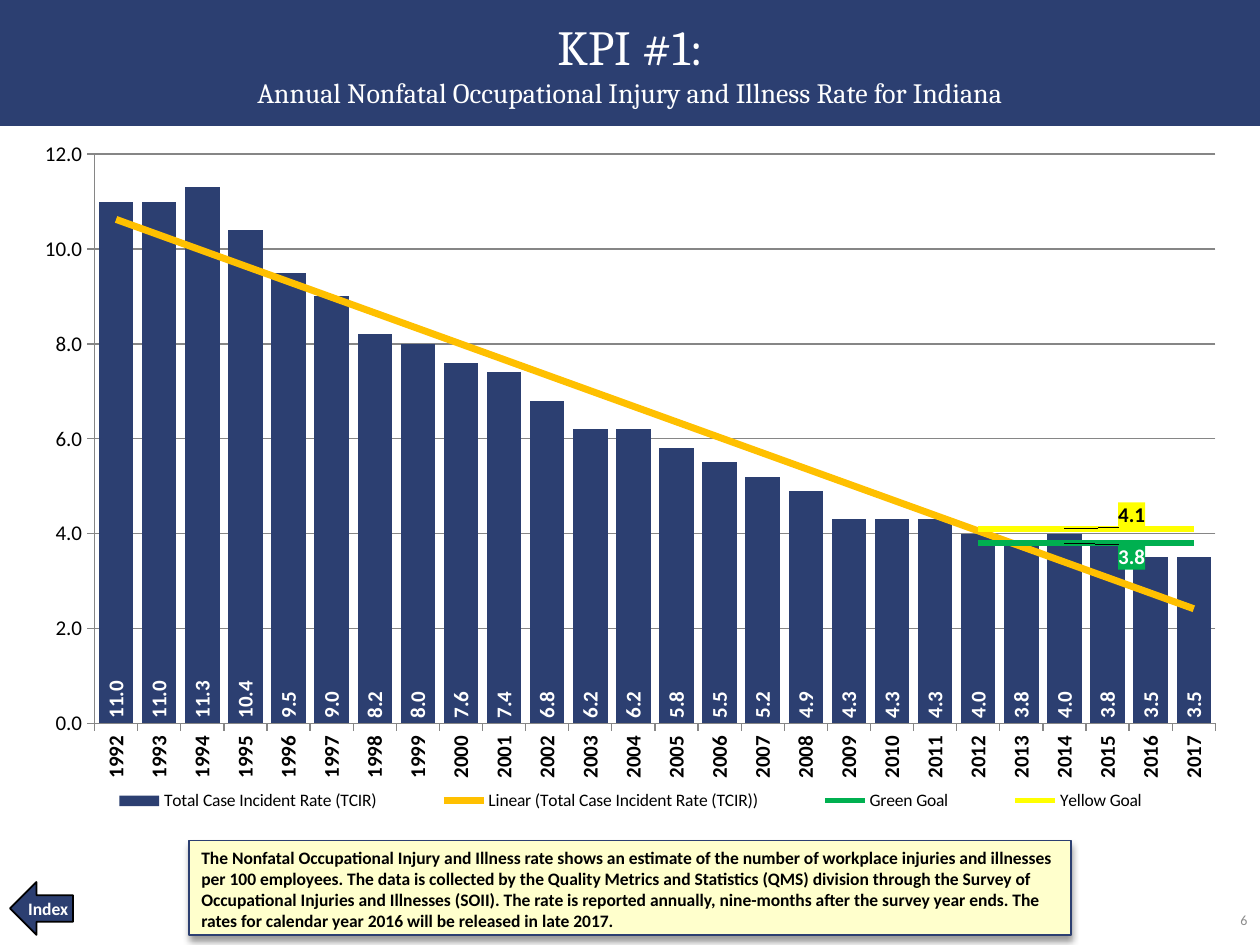
from lxml import etree
from pptx import Presentation
from pptx.chart.data import CategoryChartData as Data
from pptx.dml.color import RGBColor as RGB
from pptx.enum.chart import XL_CHART_TYPE as Kind
from pptx.enum.chart import XL_LABEL_POSITION as Spot
from pptx.enum.chart import XL_LEGEND_POSITION as Side
from pptx.enum.chart import XL_MARKER_STYLE as Mark
from pptx.enum.chart import XL_TICK_MARK as Tick
from pptx.enum.shapes import MSO_SHAPE as Shape
from pptx.enum.text import MSO_ANCHOR as Anchor
from pptx.enum.text import PP_ALIGN as Align
from pptx.oxml import parse_xml
from pptx.oxml.ns import qn
from pptx.util import Inches, Pt

HUES = {"navy": "2C3F71", "gold": "FFC000", "green": "00B050",
        "yellow": "FFFF00", "cream": "FFFFCC", "gray": "8C8C8C",
        "grid": "868686", "black": "000000", "white": "FFFFFF"}
TITLE = [("KPI #1:", 28),
         ("Annual Nonfatal Occupational Injury and Illness Rate for Indiana", 16)]
NOTE = [
    "The Nonfatal Occupational Injury and Illness rate shows an estimate of the number of workplace injuries and illnesses",
    "per 100 employees. The data is collected by the Quality Metrics and Statistics (QMS) division through the Survey of",
    "Occupational Injuries and Illnesses (SOII). The rate is reported annually, nine-months after the survey year ends. The",
    "rates for calendar year 2016 will be released in late 2017.",
]
YEARS = [str(year) for year in range(1992, 2018)]
RATES = [11, 11, 11.3, 10.4, 9.5, 9, 8.2, 8, 7.6, 7.4, 6.8, 6.2, 6.2,
         5.8, 5.5, 5.2, 4.9, 4.3, 4.3, 4.3, 4, 3.8, 4, 3.8, 3.5, 3.5]
# name, value, line colour, label text colour, label shift down
GOALS = [("Green Goal", 3.8, "green", "white", 0.02),
         ("Yellow Goal", 4.1, "yellow", "black", -0.02)]
START, TAG = YEARS.index("2012"), YEARS.index("2014")
SPACES = " ".join(f'xmlns:{key}="http://schemas.openxmlformats.org/drawingml/2006/{end}"'
                  for key, end in (("a", "main"), ("c", "chart")))


def rgb(hue):
    return RGB.from_string(HUES[hue])


def xml(tag, body):
    return parse_xml(f"<{tag} {SPACES}>{body}</{tag}>")


def style(font, size, hue="black", bold=False, face="Calibri"):
    font.size, font.bold, font.name = Pt(size), bold, face
    font.color.rgb = rgb(hue)


def write(frame, lines, size=10, align=Align.LEFT, anchor=Anchor.MIDDLE,
          inset=(0.1, 0.05), hang=0, **look):
    """Fill a frame; a line is a string or a list of (text, size) split by breaks."""
    frame.word_wrap, frame.vertical_anchor = True, anchor
    frame.margin_left = frame.margin_right = Inches(inset[0])
    frame.margin_top = frame.margin_bottom = Inches(inset[1])
    for i, line in enumerate(lines):
        para = frame.paragraphs[0] if i == 0 else frame.add_paragraph()
        para.alignment = align
        if hang:
            prop = para._p.get_or_add_pPr()
            prop.set("marL", str(Inches(hang)))
            prop.set("indent", str(-Inches(hang)))
        for j, (text, pts) in enumerate([(line, size)] if isinstance(line, str) else line):
            if j:
                para.add_line_break()
            run = para.add_run()
            run.text = text
            style(run.font, pts, **look)


def block(slide, kind, box, fill, line=None, width=1):
    shape = slide.shapes.add_shape(kind, *map(Inches, box))
    shape.shadow.inherit = False
    shape.fill.solid()
    shape.fill.fore_color.rgb = rgb(fill)
    if line:
        shape.line.color.rgb, shape.line.width = rgb(line), Pt(width)
    else:
        shape.line.fill.background()
    return shape


def layout(x, y, w=None, h=None, inner=False):
    parts = '<c:layoutTarget val="inner"/>' if inner else ""
    if w:
        parts += '<c:xMode val="edge"/><c:yMode val="edge"/>'
    sizes = zip("xywh", (x, y, w, h))
    parts += "".join(f'<c:{k} val="{v}"/>' for k, v in sizes if v is not None)
    return xml("c:layout", f"<c:manualLayout>{parts}</c:manualLayout>")


def place(node, spot):
    """Swap the layout of a chart part, or put it after the first child."""
    for old in node.findall(qn("c:layout")):
        node.remove(old)
    node.insert(0 if node.tag == qn("c:plotArea") else 1, spot)


def turn(holder):
    holder.find(qn("c:txPr")).find(qn("a:bodyPr")).set("rot", "-5400000")


def split(chart):
    """Move the goal series from the bars to a line plot on the same axes."""
    bars = chart.plots[0]._element
    lines = xml("c:lineChart", '<c:grouping val="standard"/><c:varyColors val="0"/>')
    for ser in bars.findall(qn("c:ser"))[1:]:
        for flag in ser.findall(qn("c:invertIfNegative")):
            ser.remove(flag)
        lines.append(ser)
    etree.SubElement(lines, qn("c:marker")).set("val", "1")
    for axis in bars.findall(qn("c:axId")):
        etree.SubElement(lines, qn("c:axId")).set("val", axis.get("val"))
    bars.addnext(lines)


def draw_bars(plot):
    plot.gap_width, plot.vary_by_categories = 25, False
    bars = plot.series[0]
    bars.format.fill.solid()
    bars.format.fill.fore_color.rgb = rgb("navy")
    tags = bars.data_labels
    tags.show_value, tags.position = True, Spot.INSIDE_BASE
    tags.number_format, tags.number_format_is_linked = "0.0", False
    style(tags.font, 12, "white", True)
    turn(tags._element)
    trend = xml("c:trendline", f'<c:spPr><a:ln w="{Pt(4)}"><a:solidFill>'
                f'<a:srgbClr val="{HUES["gold"]}"/></a:solidFill></a:ln></c:spPr>'
                '<c:trendlineType val="linear"/>'
                '<c:dispRSqr val="0"/><c:dispEq val="0"/>')
    bars._element.find(qn("c:cat")).addprevious(trend)


def draw_goal(goal, hue, ink, shift):
    goal.smooth, goal.marker.style = False, Mark.NONE
    goal.format.line.color.rgb, goal.format.line.width = rgb(hue), Pt(3)
    goal.data_labels.show_value = False
    tag = goal.points[TAG].data_label
    style(tag.font, 12, ink, True)
    tag.position = Spot.RIGHT
    node = goal._element.find(qn("c:dLbls")).find(qn("c:dLbl"))
    place(node, layout(0.04, shift))
    node.find(qn("c:txPr")).addprevious(xml(
        "c:spPr", f'<a:solidFill><a:srgbClr val="{HUES[hue]}"/></a:solidFill>'))


def draw_chart(slide):
    data = Data(number_format="0.0")
    data.categories = YEARS
    data.add_series("Total Case Incident Rate (TCIR)", RATES)
    for name, value, *_ in GOALS:
        data.add_series(name, [None] * START + [value] * (len(YEARS) - START))
    box = map(Inches, (0.17, 1, 9.67, 5.58))
    chart = slide.shapes.add_chart(Kind.COLUMN_CLUSTERED, *box, data).chart
    style(chart.font, 18)
    chart.has_title, chart.has_legend = False, True
    split(chart)
    draw_bars(chart.plots[0])
    for goal, (_, _, *look) in zip(chart.plots[1].series, GOALS):
        draw_goal(goal, *look)

    years, rates = chart.category_axis, chart.value_axis
    for axis in (years, rates):
        axis.major_tick_mark, axis.minor_tick_mark = Tick.OUTSIDE, Tick.NONE
        style(axis.tick_labels.font, 12, bold=axis is years)
        axis.format.line.color.rgb = rgb("grid")
    turn(years._element)
    rates.minimum_scale, rates.maximum_scale, rates.major_unit = 0, 12, 2
    rates.tick_labels.number_format = "0.0"
    rates.tick_labels.number_format_is_linked = False
    rates.major_gridlines.format.line.color.rgb = rgb("grid")

    legend = chart.legend
    legend.position, legend.include_in_layout = Side.BOTTOM, False
    style(legend.font, 10)
    place(legend._element, layout(0.03, 0.93, 0.94, 0.06))
    place(chart.plots[0]._element.getparent(), layout(0.06, 0.04, 0.92, 0.81, True))


def main():
    deck = Presentation()
    deck.slide_width, deck.slide_height = Inches(10), Inches(7.5)
    slide = deck.slides.add_slide(deck.slide_layouts[6])
    number = slide.shapes.add_textbox(*map(Inches, (9.67, 7.1, 0.33, 0.4)))
    write(number.text_frame, ["6"], size=8, align=Align.RIGHT, hue="gray")
    banner = block(slide, Shape.RECTANGLE, (0, 0, 10, 1), "navy")
    write(banner.text_frame, [TITLE], align=Align.CENTER, hue="white", face="Cambria")
    arrow = block(slide, Shape.LEFT_ARROW, (0.08, 7, 0.5, 0.42), "navy", "black")
    write(arrow.text_frame, ["Index"], align=Align.CENTER, inset=(0, 0),
          hue="white", bold=True)
    note = block(slide, Shape.RECTANGLE, (1.5, 6.67, 7, 0.75), "cream", "navy", 0.75)
    write(note.text_frame, NOTE, anchor=Anchor.TOP, hang=0.38, bold=True)
    note._element.spPr.find(qn("a:effectLst")).append(xml(
        "a:outerShdw", '<a:srgbClr val="000000"><a:alpha val="40000"/></a:srgbClr>'))
    shade = note._element.spPr.find(qn("a:effectLst"))[0]
    for key, value in (("blurRad", Pt(4)), ("dist", Pt(3)), ("dir", 5400000)):
        shade.set(key, str(value))
    draw_chart(slide)
    deck.save("out.pptx")


if __name__ == "__main__":
    main()
